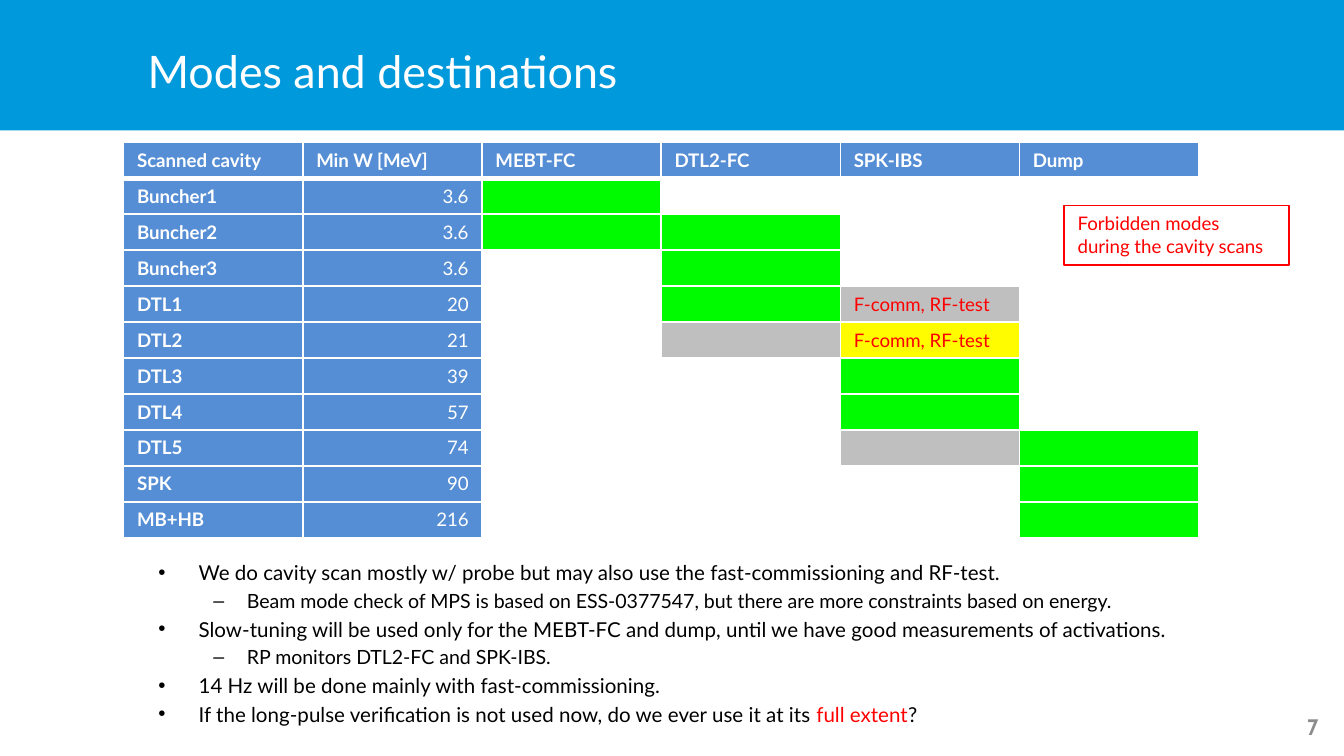
import dataclasses

import pptx
import pptx.dml.color
import pptx.enum.shapes
import pptx.enum.text
import pptx.oxml
import pptx.oxml.ns
import pptx.util
from pptx.util import Inches

ALIGN = pptx.enum.text.PP_ALIGN
ANCHOR = pptx.enum.text.MSO_ANCHOR
RECT = pptx.enum.shapes.MSO_SHAPE.RECTANGLE


@dataclasses.dataclass(frozen=True)
class Theme:
    font: str = "Lato"
    number_font: str = "Cabin"
    banner: str = "0099DC"
    header: str = "558ED5"
    white: str = "FFFFFF"
    black: str = "000000"
    red: str = "FF0000"
    number: str = "8C8C8C"
    allowed: str = "00FA00"
    limited: str = "BFBFBF"
    special: str = "FFFC00"
    title_size: float = 24
    number_size: float = 12
    table_size: float = 10
    bullet_sizes: tuple = (11, 10.5)


THEME = Theme()

HEADERS = ["Scanned cavity", "Min W [MeV]", "MEBT-FC", "DTL2-FC", "SPK-IBS", "Dump"]

# One letter per destination: a key of STATE_FILLS
CAVITIES = [
    ("Buncher1", "3.6", "A---"),
    ("Buncher2", "3.6", "AA--"),
    ("Buncher3", "3.6", "-A--"),
    ("DTL1", "20", "-AL-"),
    ("DTL2", "21", "-LS-"),
    ("DTL3", "39", "--A-"),
    ("DTL4", "57", "--A-"),
    ("DTL5", "74", "--LA"),
    ("SPK", "90", "---A"),
    ("MB+HB", "216", "---A"),
]
STATE_FILLS = {"A": THEME.allowed, "L": THEME.limited, "S": THEME.special, "-": THEME.white}
MODE_NOTES = {("DTL1", "SPK-IBS"): "F-comm, RF-test", ("DTL2", "SPK-IBS"): "F-comm, RF-test"}

# (level, [(text, colour), ...])
BULLETS = [
    (0, [("We do cavity scan mostly w/ probe but may also use the fast-commissioning and RF-test.", THEME.black)]),
    (1, [("Beam mode check of MPS is based on ESS-0377547, but there are more constraints based on energy.", THEME.black)]),
    (0, [("Slow-tuning will be used only for the MEBT-FC and dump, until we have good measurements of activations.", THEME.black)]),
    (1, [("RP monitors DTL2-FC and SPK-IBS.", THEME.black)]),
    (0, [("14 Hz will be done mainly with fast-commissioning.", THEME.black)]),
    (0, [("If the long-pulse verification is not used now, do we ever use it at its ", THEME.black),
         ("full extent", THEME.red), ("?", THEME.black)]),
]
BULLET_STYLES = [("•", 0.3, -0.3), ("–", 0.66, -0.25)]


def rgb(value):
    return pptx.dml.color.RGBColor.from_string(value)


def add_text(p, text, size, color=THEME.black, font=THEME.font, bold=False, align=ALIGN.LEFT):
    p.alignment = align
    r = p.add_run()
    r.text = text
    r.font.name = font
    r.font.size = pptx.util.Pt(size)
    r.font.bold = bold
    r.font.color.rgb = rgb(color)


def add_rect(slide, left, top, width, height, fill=None, line=None):
    sp = slide.shapes.add_shape(RECT, Inches(left), Inches(top), Inches(width), Inches(height))
    sp.shadow.inherit = False
    if fill:
        sp.fill.solid()
        sp.fill.fore_color.rgb = rgb(fill)
    else:
        sp.fill.background()
    if line:
        sp.line.color.rgb = rgb(line)
        sp.line.width = pptx.util.Pt(1)
    else:
        sp.line.fill.background()
    return sp


def add_box(slide, left, top, width, height, anchor=ANCHOR.TOP):
    box = slide.shapes.add_textbox(Inches(left), Inches(top), Inches(width), Inches(height))
    tf = box.text_frame
    tf.word_wrap = True
    tf.vertical_anchor = anchor
    return tf


def set_borders(cell, **widths):
    """Draw white borders of 1 pt, or of the width given for a side (L, R, T, B)."""
    tc_pr = cell._tc.get_or_add_tcPr()
    for side in "LRTB":
        width = pptx.util.Pt(widths.get(side, 1))
        tc_pr.append(pptx.oxml.parse_xml(
            f'<a:ln{side} {pptx.oxml.ns.nsdecls("a")} w="{width}"><a:solidFill>'
            f'<a:srgbClr val="{THEME.white}"/></a:solidFill></a:ln{side}>'))


def fill_cell(cell, fill, text="", **text_format):
    cell.fill.solid()
    cell.fill.fore_color.rgb = rgb(fill)
    p = cell.text_frame.paragraphs[0]
    if text:
        add_text(p, text, THEME.table_size, **text_format)
    else:
        # An empty cell needs the small type too, or its row grows
        p._p.append(pptx.oxml.parse_xml(
            f'<a:endParaRPr {pptx.oxml.ns.nsdecls("a")} sz="{THEME.table_size * 100}">'
            f'<a:latin typeface="{THEME.font}"/></a:endParaRPr>'))


def add_mode_table(slide):
    rows, cols = len(CAVITIES) + 1, len(HEADERS)
    table = slide.shapes.add_table(
        rows, cols, Inches(0.92), Inches(1.06), Inches(8), Inches(2.93)).table
    table.horz_banding = False
    for row in range(rows):
        for col in range(cols):
            set_borders(table.cell(row, col), T=3 if row == 1 else 1, B=3 if row == 0 else 1)
    for col, header in enumerate(HEADERS):
        fill_cell(table.cell(0, col), THEME.header, header, color=THEME.white, bold=True)
    for row, (cavity, energy, states) in enumerate(CAVITIES, start=1):
        fill_cell(table.cell(row, 0), THEME.header, cavity, color=THEME.white, bold=True)
        fill_cell(table.cell(row, 1), THEME.header, energy, color=THEME.white, align=ALIGN.RIGHT)
        for col, state in enumerate(states, start=2):
            note = MODE_NOTES.get((cavity, HEADERS[col]), "")
            fill_cell(table.cell(row, col), STATE_FILLS[state], note, color=THEME.red)


def set_bullet(p, level):
    char, margin, indent = BULLET_STYLES[level]
    p.level = level
    p_pr = p._p.get_or_add_pPr()
    p_pr.set("marL", str(Inches(margin)))
    p_pr.set("indent", str(Inches(indent)))
    for xml in ('<a:buFont {} typeface="Arial"/>', f'<a:buChar {{}} char="{char}"/>'):
        p_pr.append(pptx.oxml.parse_xml(xml.format(pptx.oxml.ns.nsdecls("a"))))


def add_bullets(slide):
    tf = add_box(slide, 1.08, 4.12, 7.83, 1.38)
    for i, (level, runs) in enumerate(BULLETS):
        p = tf.add_paragraph() if i else tf.paragraphs[0]
        size = THEME.bullet_sizes[level]
        set_bullet(p, level)
        p.space_before = pptx.util.Pt(0.2 * size if i else 0)
        for text, color in runs:
            add_text(p, text, size, color=color)


def add_callout(slide):
    tf = add_rect(slide, 7.92, 1.53, 1.67, 0.44, line=THEME.red).text_frame
    tf.word_wrap = True
    tf.vertical_anchor = ANCHOR.TOP
    tf.margin_right = Inches(0.15)
    add_text(tf.paragraphs[0], "Forbidden modes during the cavity scans",
             THEME.table_size, color=THEME.red)


def main():
    prs = pptx.Presentation()
    prs.slide_width, prs.slide_height = Inches(10), Inches(10 * 9 / 16)
    slide = prs.slides.add_slide(prs.slide_layouts[6])

    add_rect(slide, 0, 0, 10, 0.97, fill=THEME.banner)
    title = add_box(slide, 1, 0.12, 8.67, 0.81, anchor=ANCHOR.MIDDLE)
    add_text(title.paragraphs[0], "Modes and destinations", THEME.title_size, color=THEME.white)
    number = add_box(slide, 7.58, 5.26, 2.33, 0.3, anchor=ANCHOR.MIDDLE)
    add_text(number.paragraphs[0], "7", THEME.number_size, color=THEME.number,
             font=THEME.number_font, bold=True, align=ALIGN.RIGHT)
    add_mode_table(slide)
    add_bullets(slide)
    add_callout(slide)

    prs.save("out.pptx")


if __name__ == "__main__":
    main()
